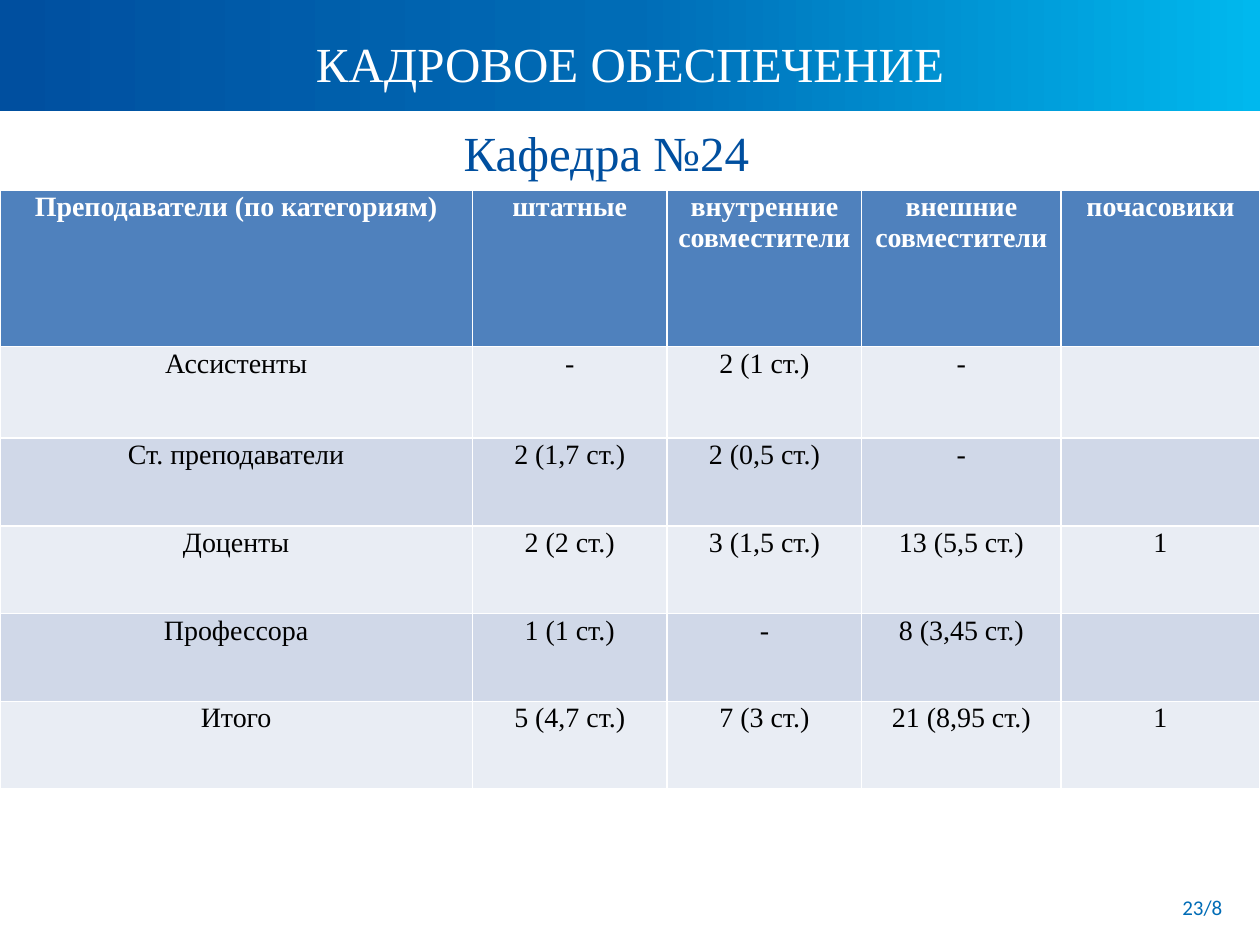
from copy import deepcopy

from lxml import etree
from pptx import Presentation
from pptx import util as u
from pptx.dml import color
from pptx.enum import shapes, text
from pptx.oxml import ns

SERIF = "Times New Roman"
WHITE, BLACK = "FFFFFF", "000000"
NAVY, BLUE, CYAN = "004F9F", "006CB6", "00B8EE"
HEADER, BANDS = "4F81BD", ("E9EDF4", "D0D8E8")
CENTER, RIGHT = text.PP_ALIGN.CENTER, text.PP_ALIGN.RIGHT


def rgb(value):
    return color.RGBColor.from_string(value)


class SlideBuilder:
    def __init__(self, s, border=1):
        self.s = s
        self.border = border

    def style(self, p, size, c, align=CENTER, font=SERIF, bold=False):
        p.alignment = align
        p.font.size = u.Pt(size)
        p.font.name = font
        p.font.bold = bold
        p.font.color.rgb = rgb(c)

    def band(self, x, y, w, h, colours):
        sp = self.s.shapes.add_shape(shapes.MSO_SHAPE.RECTANGLE,
                                     u.Cm(x), u.Cm(y), u.Cm(w), u.Cm(h))
        sp.shadow.inherit = False
        sp.line.fill.background()
        sp.fill.gradient()
        sp.fill.gradient_angle = 0
        # The default gradient has two stops; add the ones in between
        stops = sp._element.spPr.find(".//" + ns.qn("a:gsLst"))
        for _ in colours[2:]:
            stops.insert(1, deepcopy(stops[0]))
        for i, (stop, c) in enumerate(zip(sp.fill.gradient_stops, colours)):
            stop.position = i / (len(colours) - 1)
            stop.color.rgb = rgb(c)

    def label(self, x, y, w, h, words, size, c, margins=(0.25, 0.13, 0.25), **look):
        tf = self.s.shapes.add_textbox(u.Cm(x), u.Cm(y), u.Cm(w), u.Cm(h)).text_frame
        tf.word_wrap = True
        tf.margin_left, tf.margin_top, tf.margin_right = map(u.Cm, margins)
        p = tf.paragraphs[0]
        p.text = words
        self.style(p, size, c, **look)

    def cell(self, cell, words, fill, c, bold):
        cell.fill.solid()
        cell.fill.fore_color.rgb = rgb(fill)
        cell.margin_left = cell.margin_top = cell.margin_right = u.Cm(0.03)
        cell.margin_bottom = 0
        p = cell.text_frame.paragraphs[0]
        p.text = words
        self.style(p, 16, c, bold=bold)
        # Borders come before the fill in the cell properties
        props = cell._tc.get_or_add_tcPr()
        for i, side in enumerate(("lnL", "lnR", "lnT", "lnB")):
            ln = etree.Element(ns.qn("a:" + side), w=str(u.Pt(self.border)))
            solid = etree.SubElement(ln, ns.qn("a:solidFill"))
            etree.SubElement(solid, ns.qn("a:srgbClr"), val=WHITE)
            props.insert(i, ln)

    def table(self, x, y, widths, heights, rows):
        table = self.s.shapes.add_table(len(rows), len(widths), u.Cm(x), u.Cm(y),
                                        u.Cm(sum(widths)), u.Cm(sum(heights))).table
        for column, w in zip(table.columns, widths):
            column.width = u.Cm(w)
        for i, (row, h, values) in enumerate(zip(table.rows, heights, rows)):
            row.height = u.Cm(h)
            fill = BANDS[(i - 1) % 2] if i else HEADER
            for cell, words in zip(row.cells, values):
                self.cell(cell, words, fill, BLACK if i else WHITE, bold=i == 0)


STAFF = [
    ("Преподаватели (по категориям)", "штатные", "внутренние совместители",
     "внешние совместители", "почасовики"),
    ("Ассистенты", "-", "2 (1 ст.)", "-", ""),
    ("Ст. преподаватели", "2 (1,7 ст.)", "2 (0,5 ст.)", "-", ""),
    ("Доценты", "2 (2 ст.)", "3 (1,5 ст.)", "13 (5,5 ст.)", "1"),
    ("Профессора", "1 (1 ст.)", "-", "8 (3,45 ст.)", ""),
    ("Итого", "5 (4,7 ст.)", "7 (3 ст.)", "21 (8,95 ст.)", "1"),
]


def main():
    prs = Presentation()
    prs.slide_width, prs.slide_height = u.Cm(25.4), u.Cm(19.05)
    slide = SlideBuilder(prs.slides.add_slide(prs.slide_layouts[6]))

    # Header band and page number
    slide.band(0, 0, 25.4, 2.24, (NAVY, BLUE, CYAN))
    slide.label(23.16, 17.91, 1.73, 1.8, "23/8", 12, BLUE, align=RIGHT, font="Calibri")

    # Titles
    slide.label(1.22, 0.43, 23.5, 2.31, "КАДРОВОЕ ОБЕСПЕЧЕНИЕ", 28, WHITE,
                margins=(0.25, 0.25, 0.79))
    slide.label(2.31, 2.24, 19.33, 1.6, "Кафедра №24", 28, NAVY,
                margins=(0.75, 0.23, 0.25))

    # Staff table
    slide.table(0, 3.83, (9.52, 3.93, 3.92, 4.02, 4.01),
                (3.16, 1.84) + (1.77,) * 4, STAFF)

    prs.save("out.pptx")


if __name__ == "__main__":
    main()
